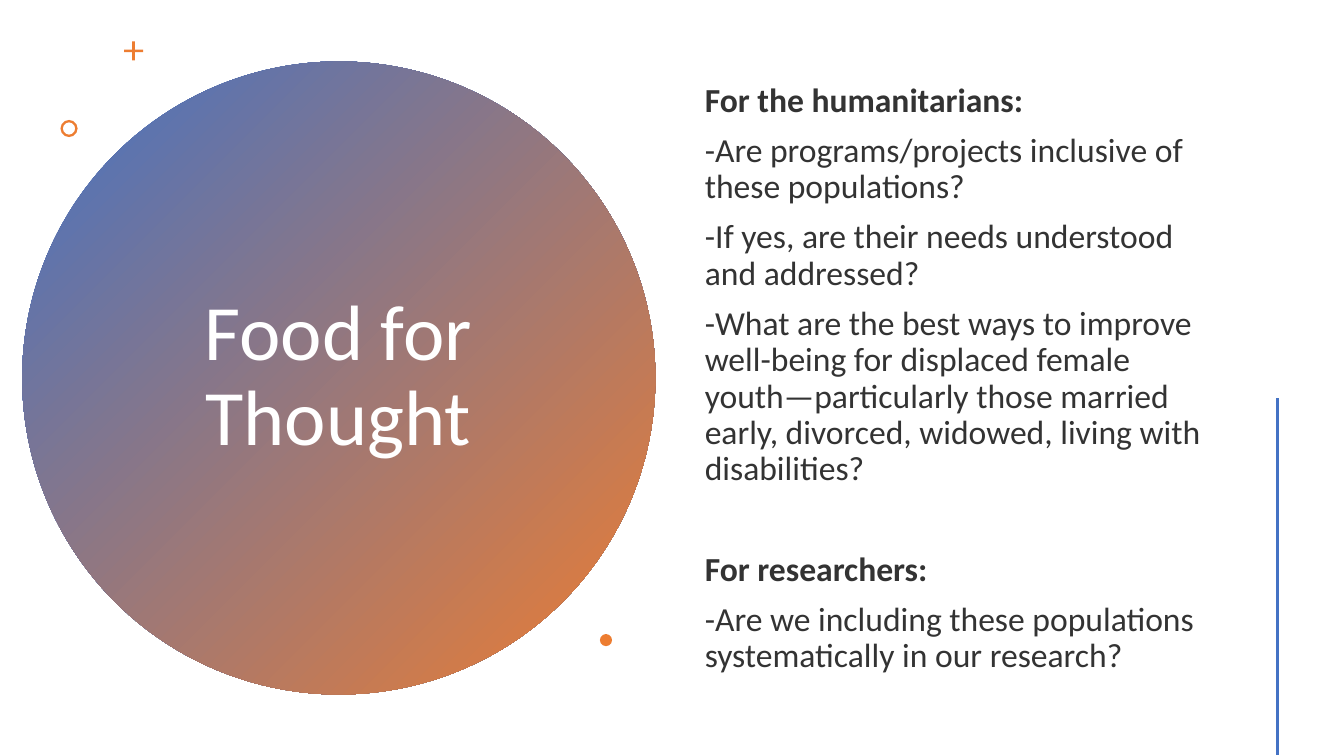
from lxml.etree import SubElement
from pptx import Presentation
from pptx.dml.color import RGBColor
from pptx.enum.shapes import MSO_CONNECTOR, MSO_SHAPE as SHAPE
from pptx.enum.text import MSO_ANCHOR, MSO_AUTO_SIZE, PP_ALIGN
from pptx.oxml.ns import qn
from pptx.util import Inches, Pt

BLUE, ORANGE, WHITE, INK = "4472C4", "ED7D31", "FFFFFF", "333333"
PARAGRAPHS = [
    ("For the humanitarians:", True, 10),
    ("-Are programs/projects inclusive of these populations?", False, 10),
    ("-If yes, are their needs understood and addressed?", False, 10),
    ("-What are the best ways to improve well-being for displaced female "
     "youth—particularly those married early, divorced, widowed, living with "
     "disabilities?", False, 10),
    ("For researchers:", True, 46),
    ("-Are we including these populations systematically in our research?", False, 10),
]


def rgb(color):
    """Turn a hex string into a colour."""
    return RGBColor.from_string(color)


class SlideBuilder:
    """Holds the font and the current slide."""

    def __init__(self, s, font="Calibri"):
        """Keep the slide and the font name."""
        self.s = s
        self.font = font

    def shape(self, kind, left, top, size, color=ORANGE, adjust=None):
        """Add a square preset shape with a plain fill."""
        sp = self.s.shapes.add_shape(kind, *map(Inches, (left, top, size, size)))
        sp.shadow.inherit = False
        sp.fill.solid()
        sp.fill.fore_color.rgb = rgb(color)
        sp.line.fill.background()
        if adjust is not None:
            sp.adjustments[0] = adjust
        return sp

    def gradient_circle(self, left, top, size, start, end):
        """Add a circle behind the text, shaded towards its lower right."""
        sp = self.shape(SHAPE.OVAL, left, top, size)
        sp.fill.gradient()
        sp.fill.gradient_angle = 315
        for stop, color, position in zip(sp.fill.gradient_stops, (start, end), (0, 1)):
            stop.color.rgb = rgb(color)
            stop.position = position
        sp.element.getparent().insert(2, sp.element)

    def line(self, x1, y1, x2, y2, color, width):
        """Add a straight line."""
        c = self.s.shapes.add_connector(
            MSO_CONNECTOR.STRAIGHT, *map(Inches, (x1, y1, x2, y2)))
        c.line.color.rgb = rgb(color)
        c.line.width = Pt(width)
        SubElement(c.element.spPr, qn("a:effectLst"))

    def text(self, sp, box, paragraphs, size, color, align):
        """Place a placeholder and fill it with paragraphs."""
        sp.left, sp.top, sp.width, sp.height = map(Inches, box)
        tf = sp.text_frame
        tf.word_wrap = True
        tf.auto_size = MSO_AUTO_SIZE.NONE
        tf.vertical_anchor = MSO_ANCHOR.MIDDLE
        for i, (words, bold, before) in enumerate(paragraphs):
            p = tf.add_paragraph() if i else tf.paragraphs[0]
            p.text = words
            p.alignment = align
            p.line_spacing = 0.9
            p.space_before = Pt(before)
            p.font.name, p.font.size, p.font.bold = self.font, Pt(size), bold
            p.font.color.rgb = rgb(color)
            pPr = p._p.get_or_add_pPr()
            pPr.set("marL", "0")
            pPr.set("indent", "0")
            pPr.find(qn("a:spcBef")).addnext(pPr.makeelement(qn("a:buNone")))


def main():
    """Build the slide and save it."""
    prs = Presentation()
    prs.slide_width, prs.slide_height = Inches(13.33), Inches(7.5)
    s = prs.slides.add_slide(prs.slide_layouts[1])
    b = SlideBuilder(s)
    b.gradient_circle(0.22, 0.61, 6.28, BLUE, ORANGE)
    b.text(s.shapes.title, (1.36, 1.41, 3.99, 4.67),
           [("Food for Thought", False, 0)], 56, WHITE, PP_ALIGN.CENTER)
    b.text(s.placeholders[1], (6.89, 0.57, 5.22, 6.38),
           PARAGRAPHS, 24, INK, PP_ALIGN.LEFT)
    b.shape(SHAPE.CROSS, 1.23, 0.41, 0.19, adjust=0.43)
    b.shape(SHAPE.DONUT, 0.6, 1.19, 0.17, adjust=0.14)
    b.shape(SHAPE.OVAL, 5.95, 6.29, 0.12)
    b.line(12.67, 3.95, 12.67, 7.49, BLUE, 2)
    prs.save("out.pptx")


if __name__ == "__main__":
    main()
